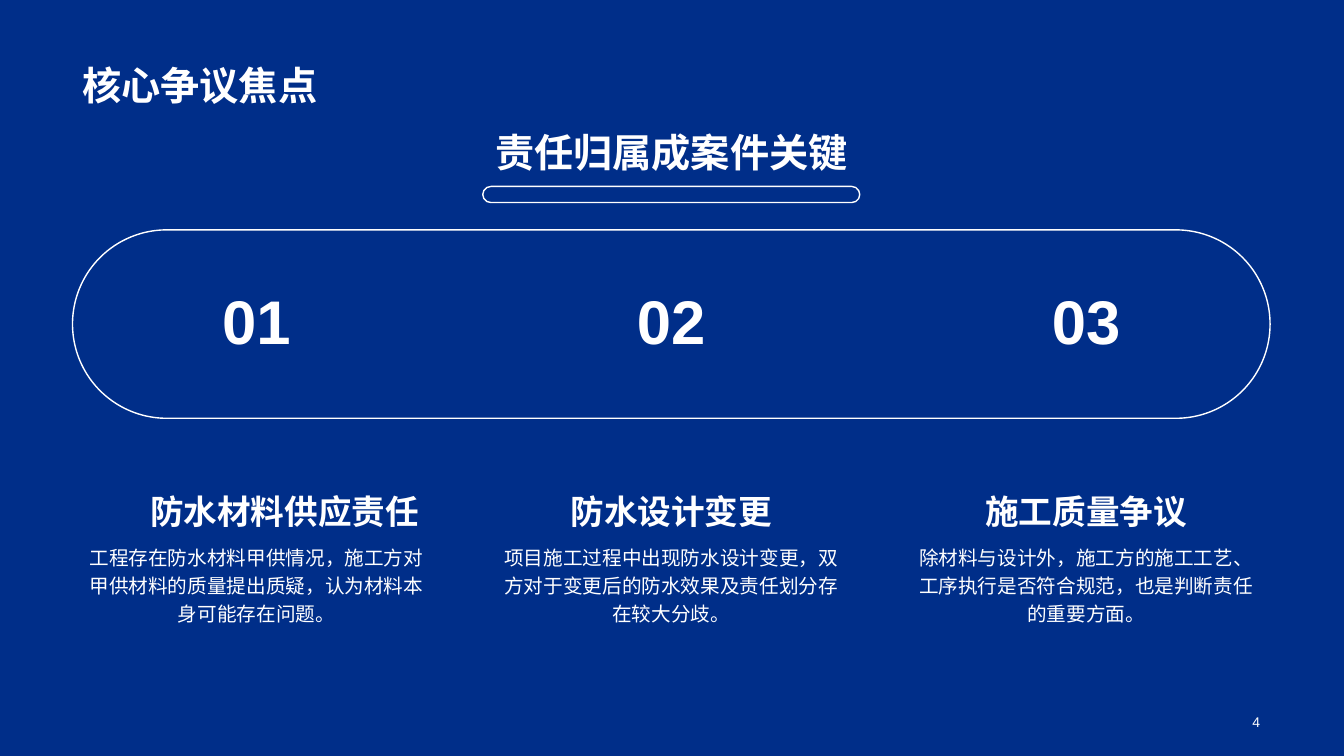
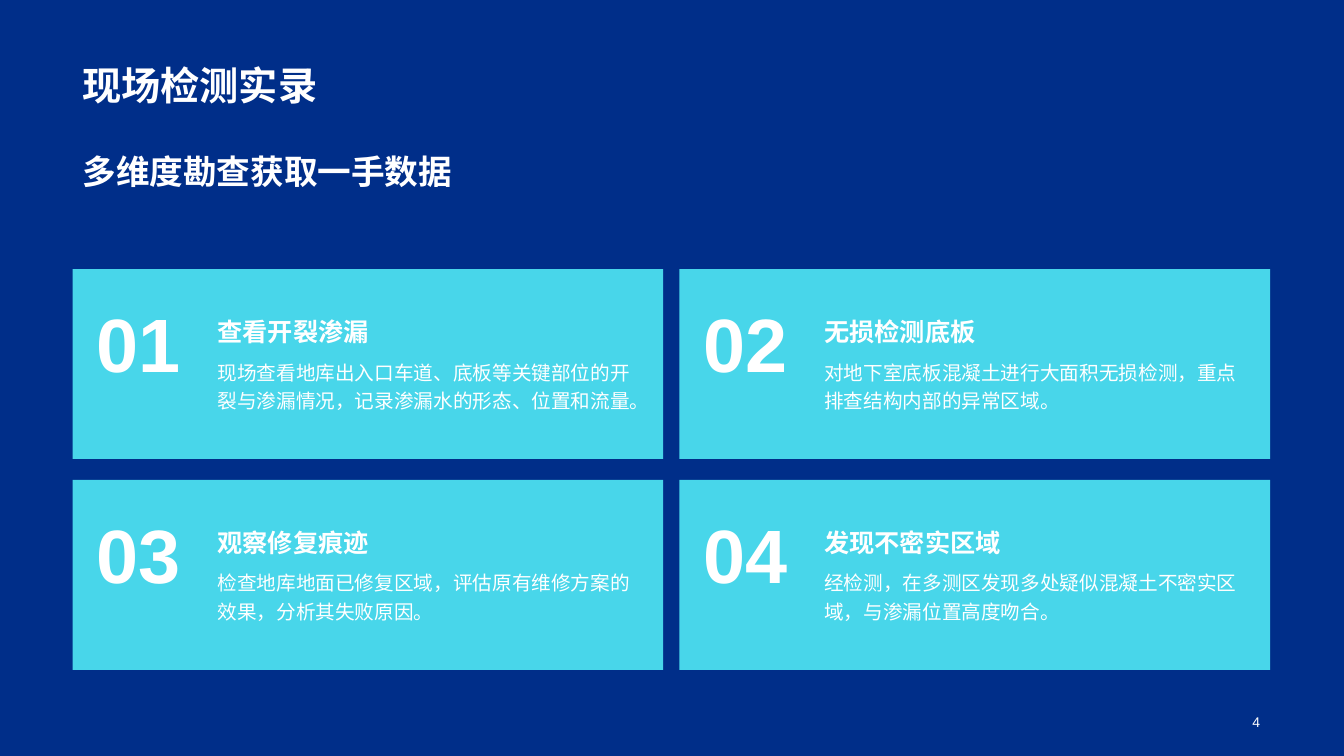
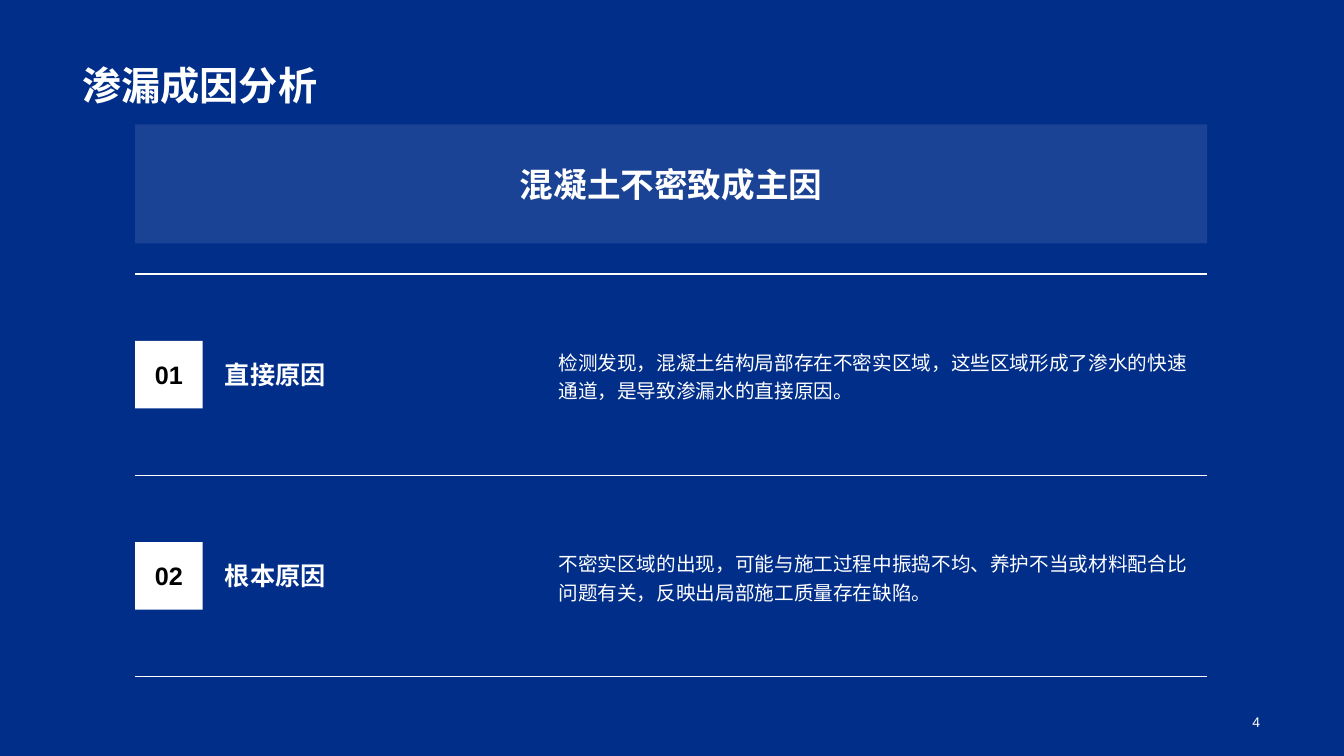
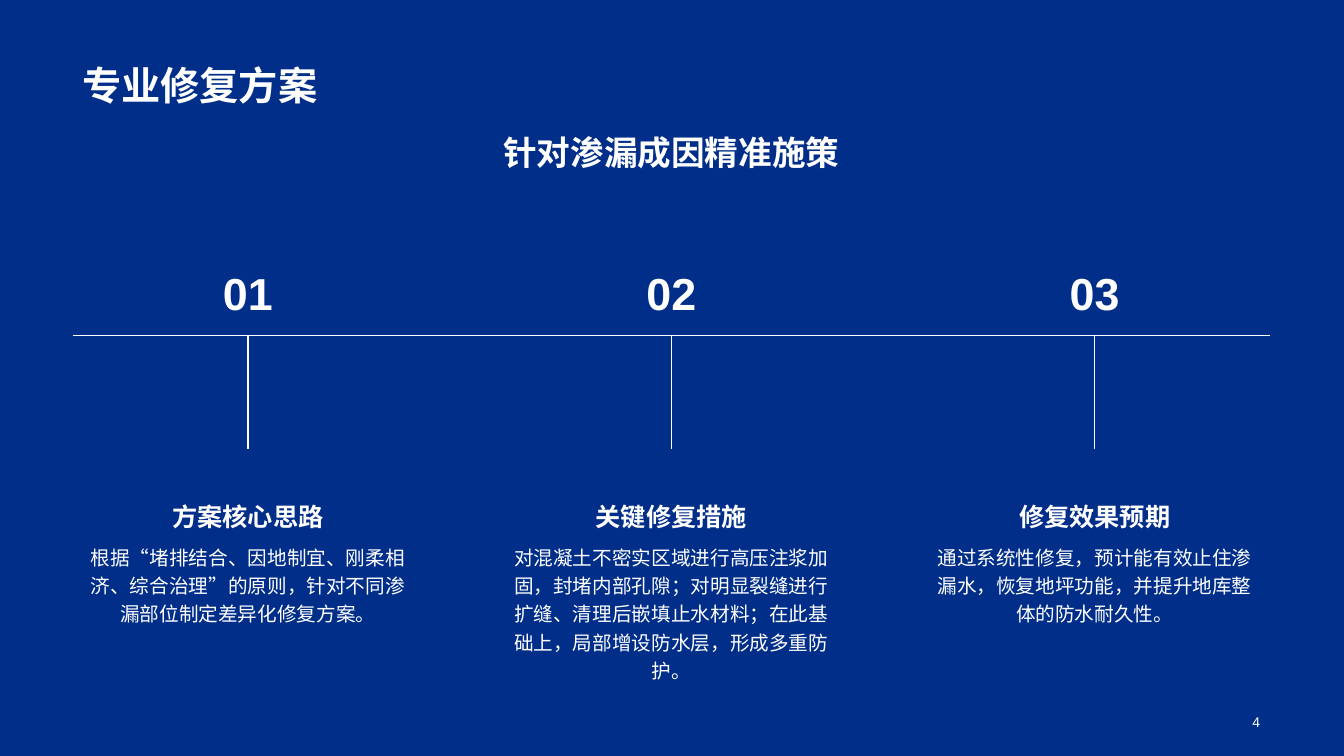
import pptx
import pptx.util
import pptx.dml.color
import pptx.enum.shapes
import pptx.enum.text
import pptx.oxml.ns
from lxml import etree

Pt = pptx.util.Pt
SHAPE = pptx.enum.shapes.MSO_SHAPE
ALIGN = pptx.enum.text.PP_ALIGN
ANCHOR = pptx.enum.text.MSO_ANCHOR
qn = pptx.oxml.ns.qn

COLORS = {"navy": "002E89", "white": "FFFFFF", "cyan": "48D6EA", "black": "000000"}
CJK, LATIN = "Noto Sans CJK SC", "Arial"

# Content area shared by all slides
LEFT, WIDTH = 51.8, 855.4
CAPTION_TOP, HEADING_H, BODY_H = 321.8, 61.2, 100


def rgb(name):
    return pptx.dml.color.RGBColor.from_string(COLORS[name])


# Basic parts
def write(sp, text, size, font=CJK, bold=False, color="white", align=ALIGN.LEFT,
          anchor=ANCHOR.MIDDLE, wrap=True, spacing=None):
    tf = sp.text_frame
    tf.word_wrap = wrap
    tf.vertical_anchor = anchor
    p = tf.paragraphs[0]
    p.alignment = align
    if spacing:
        p.line_spacing = spacing
    r = p.add_run()
    r.text = text
    r.font.size, r.font.bold, r.font.name = Pt(size), bold, font
    r.font.color.rgb = rgb(color)
    etree.SubElement(r.font._element, qn("a:ea")).set("typeface", font)


def add_text(s, box, text, size, **style):
    write(s.shapes.add_textbox(*map(Pt, box)), text, size, **style)


def add_body(s, box, text, align=ALIGN.LEFT, anchor=ANCHOR.TOP):
    add_text(s, box, text, 14, align=align, anchor=anchor, spacing=1.2)


def add_box(s, box, fill=None, alpha=None, kind=SHAPE.RECTANGLE):
    sp = s.shapes.add_shape(kind, *map(Pt, box))
    sp.shadow.inherit = False
    if fill:
        sp.fill.solid()
        sp.fill.fore_color.rgb = rgb(fill)
        sp.line.fill.background()
    else:
        sp.fill.background()
        sp.line.color.rgb = rgb("white")
        sp.line.width = Pt(1)
    if alpha:
        clr = sp._element.spPr.find(qn("a:solidFill"))[0]
        etree.SubElement(clr, qn("a:alpha")).set("val", str(alpha * 1000))
    return sp


def add_pill(s, box):
    add_box(s, box, kind=SHAPE.ROUNDED_RECTANGLE).adjustments[0] = 0.5


def add_line(s, x1, y1, x2, y2):
    line = s.shapes.add_connector(
        pptx.enum.shapes.MSO_CONNECTOR.STRAIGHT, *map(Pt, (x1, y1, x2, y2)))
    line.line.color.rgb = rgb("white")
    line.line.width = Pt(1)
    etree.SubElement(line._element.spPr, qn("a:effectLst"))


# Frame of every slide: title and page number
def new_slide(prs, title):
    s = prs.slides.add_slide(prs.slide_layouts[6])
    add_text(s, (LEFT, 10.1, WIDTH, 70.5), title, 28, bold=True, anchor=ANCHOR.BOTTOM)
    add_text(s, (619.2, 504.7, 288, 21.6), "4", 10, font=LATIN, align=ALIGN.RIGHT)
    return s


def add_subtitle(s, text, size=24, height=38.2, align=ALIGN.CENTER):
    add_text(s, (LEFT, 89.3, WIDTH, height), text, size, bold=True, align=align)


def column_lefts(count, width):
    step = (WIDTH - width) / (count - 1)
    return [LEFT + i * step for i in range(count)]


# One numbered column: centred number above, heading and body below
def add_column(s, x, width, number, number_box, heading, body, sizes, shift=0):
    top, w, h = number_box
    number_size, heading_size = sizes
    add_text(s, (x + (width - w) / 2, top, w, h), number, number_size, font=LATIN,
             bold=True, align=ALIGN.CENTER, wrap=False)
    add_text(s, (x + shift, CAPTION_TOP, width, HEADING_H), heading, heading_size,
             bold=True, align=ALIGN.CENTER, anchor=ANCHOR.BOTTOM)
    add_body(s, (x, CAPTION_TOP + HEADING_H, width, BODY_H), body, align=ALIGN.CENTER)


def dispute_slide(prs, title, subtitle, items):
    s = new_slide(prs, title)
    add_subtitle(s, subtitle, size=28)
    bar_w, col_w = 269.3, 262.8
    add_pill(s, (LEFT + (WIDTH - bar_w) / 2, 133.2, bar_w, 11.5))
    add_pill(s, (LEFT, 164.2, WIDTH, 134.6))
    for i, (x, item) in enumerate(zip(column_lefts(len(items), col_w), items)):
        add_column(s, x, col_w, f"{i + 1:02}", (191.5, 152, 73.4), *item,
                   sizes=(44, 24), shift=0 if i else 20)


# One card of the inspection grid
def add_card(s, box, number, heading, body):
    x, y, w, h = box
    add_box(s, box, fill="cyan")
    add_text(s, (x + 10.1, y + 16.6, 86.4, 113), number, 54, font=LATIN, bold=True,
             anchor=ANCHOR.TOP, wrap=False)
    add_text(s, (x + 96.5, y + 7.9, 313.2, 51), heading, 18, bold=True,
             anchor=ANCHOR.BOTTOM)
    add_body(s, (x + 96.5, y + 58.4, 313.2, 65.5), body)


def inspection_slide(prs, title, subtitle, items):
    s = new_slide(prs, title)
    add_subtitle(s, subtitle, height=65.5, align=ALIGN.LEFT)
    top, card_w, card_h, gap_y = 192.2, 422, 135.7, 14.9
    lefts = column_lefts(2, card_w)
    for i, item in enumerate(items):
        row, col = divmod(i, 2)
        box = (lefts[col], top + row * (card_h + gap_y), card_w, card_h)
        add_card(s, box, f"{i + 1:02}", *item)


# One row of the cause list
def add_cause(s, x, y, h, number, heading, body):
    side, text_h = 48.2, 100
    badge = add_box(s, (x, y + (h - side) / 2, side, side), fill="white")
    write(badge, number, 18, font=LATIN, bold=True, color="black",
          align=ALIGN.CENTER, wrap=False)
    text_top = y + (h - text_h) / 2
    add_text(s, (x + 56.9, text_top, 226.8, text_h), heading, 18, bold=True)
    add_body(s, (x + 295.2, text_top, 470.2, text_h), body, anchor=ANCHOR.MIDDLE)


def cause_slide(prs, title, subtitle, items):
    s = new_slide(prs, title)
    x, w, top, row_h = 96.6, 765.6, 195.8, 143.7
    panel = add_box(s, (x, 88.8, w, 85), fill="white", alpha=10)
    write(panel, subtitle, 24, bold=True, align=ALIGN.CENTER)
    for i, item in enumerate(items):
        add_cause(s, x, top + i * row_h, row_h, f"{i + 1:02}", *item)
    for i in range(len(items) + 1):
        y = top + i * row_h
        add_line(s, x, y, x + w, y)


def repair_slide(prs, title, subtitle, items):
    s = new_slide(prs, title)
    add_subtitle(s, subtitle)
    axis_y, stem_h, col_w = 239.8, 80.6, 250.6
    add_line(s, LEFT, axis_y, LEFT + WIDTH, axis_y)
    for i, (x, item) in enumerate(zip(column_lefts(len(items), col_w), items)):
        mid = x + col_w / 2
        add_line(s, mid, axis_y, mid, axis_y + stem_h)
        add_column(s, x, col_w, f"{i + 1:02}", (182.2, 80, 54), *item, sizes=(32, 18))


def main():
    prs = pptx.Presentation()
    prs.slide_width, prs.slide_height = Pt(960), Pt(540)
    fill = prs.slide_master.background.fill
    fill.solid()
    fill.fore_color.rgb = rgb("navy")

    dispute_slide(prs, "核心争议焦点", "责任归属成案件关键", [
        ("防水材料供应责任",
         "工程存在防水材料甲供情况，施工方对甲供材料的质量提出质疑，认为材料本身可能存在问题。"),
        ("防水设计变更",
         "项目施工过程中出现防水设计变更，双方对于变更后的防水效果及责任划分存在较大分歧。"),
        ("施工质量争议",
         "除材料与设计外，施工方的施工工艺、工序执行是否符合规范，也是判断责任的重要方面。"),
    ])
    inspection_slide(prs, "现场检测实录", "多维度勘查获取一手数据", [
        ("查看开裂渗漏",
         "现场查看地库出入口车道、底板等关键部位的开裂与渗漏情况，记录渗漏水的形态、位置和流量。"),
        ("无损检测底板",
         "对地下室底板混凝土进行大面积无损检测，重点排查结构内部的异常区域。"),
        ("观察修复痕迹",
         "检查地库地面已修复区域，评估原有维修方案的效果，分析其失败原因。"),
        ("发现不密实区域",
         "经检测，在多测区发现多处疑似混凝土不密实区域，与渗漏位置高度吻合。"),
    ])
    cause_slide(prs, "渗漏成因分析", "混凝土不密致成主因", [
        ("直接原因",
         "检测发现，混凝土结构局部存在不密实区域，这些区域形成了渗水的快速通道，是导致渗漏水的直接原因。"),
        ("根本原因",
         "不密实区域的出现，可能与施工过程中振捣不均、养护不当或材料配合比问题有关，反映出局部施工质量存在缺陷。"),
    ])
    repair_slide(prs, "专业修复方案", "针对渗漏成因精准施策", [
        ("方案核心思路",
         "根据“堵排结合、因地制宜、刚柔相济、综合治理”的原则，针对不同渗漏部位制定差异化修复方案。"),
        ("关键修复措施",
         "对混凝土不密实区域进行高压注浆加固，封堵内部孔隙；对明显裂缝进行扩缝、清理后嵌填止水材料；"
         "在此基础上，局部增设防水层，形成多重防护。"),
        ("修复效果预期",
         "通过系统性修复，预计能有效止住渗漏水，恢复地坪功能，并提升地库整体的防水耐久性。"),
    ])
    prs.save("out.pptx")


if __name__ == "__main__":
    main()
